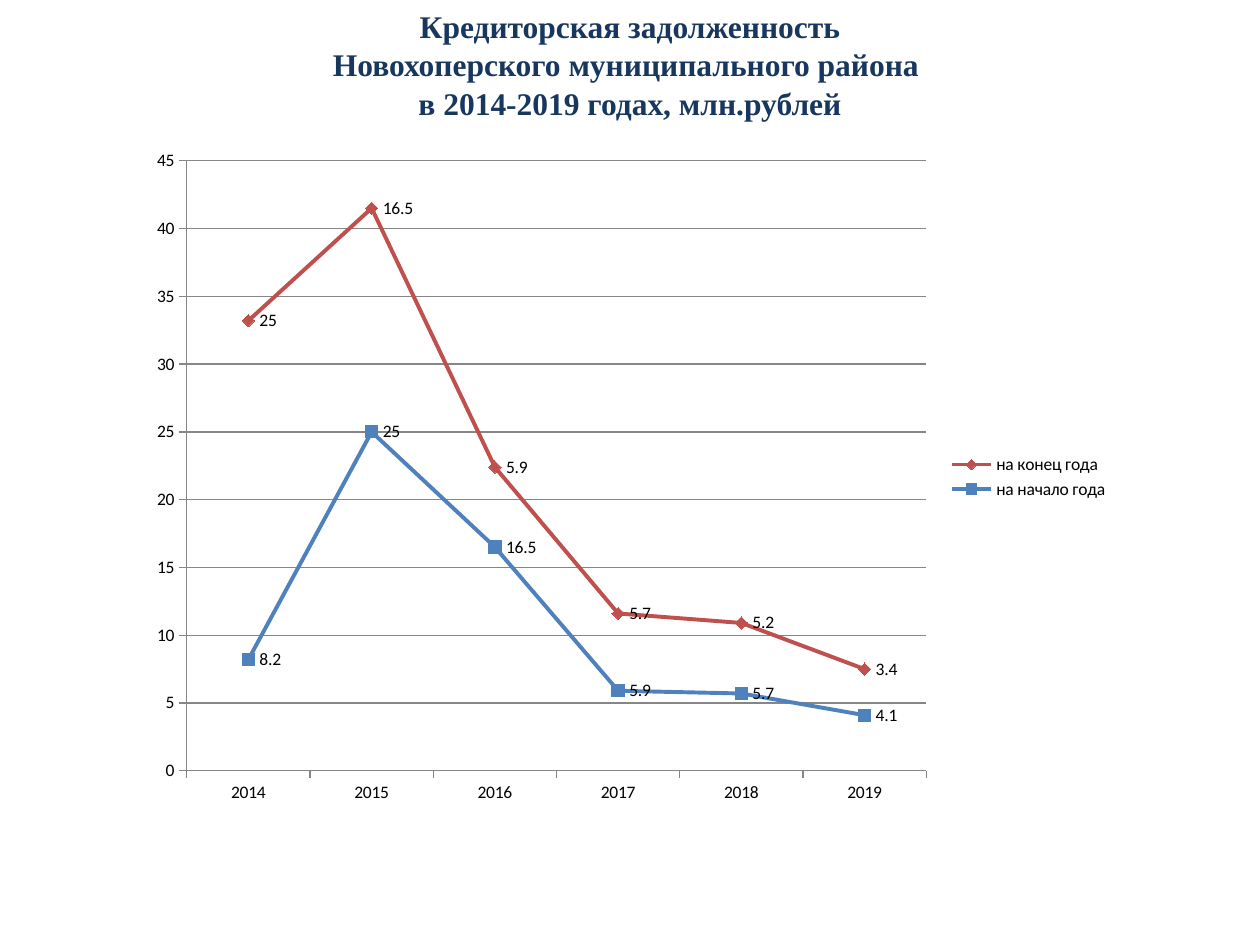
from pptx import Presentation
from pptx import util as u
from pptx.chart.data import CategoryChartData
from pptx.dml.color import RGBColor
from pptx.enum import chart as ch
from pptx.enum import text

TITLE_LINES = [
    "Кредиторская задолженность",
    "Новохоперского муниципального района ",
    "в 2014-2019 годах, млн.рублей",
]
YEARS = ["2014", "2015", "2016", "2017", "2018", "2019"]
# Name, values, colour, marker
DEBT_SERIES = [
    ("на начало года", (8.2, 25, 16.5, 5.9, 5.7, 4.1), "4F81BD", ch.XL_MARKER_STYLE.SQUARE),
    ("на конец года", (25, 16.5, 5.9, 5.7, 5.2, 3.4), "C0504D", ch.XL_MARKER_STYLE.DIAMOND),
]


def color(hex_string):
    return RGBColor.from_string(hex_string)


class DebtSlide:
    title_font, title_color = "Times New Roman", "17375E"
    chart_font, chart_color, axis_color = "Calibri", "000000", "868686"

    def __init__(self, presentation):
        self.slide = presentation.slides.add_slide(presentation.slide_layouts[5])

    def place_title(self, lines, left, top, width, height):
        shape = self.slide.shapes.title
        shape.left, shape.top = u.Inches(left), u.Inches(top)
        shape.width, shape.height = u.Inches(width), u.Inches(height)
        frame = shape.text_frame
        frame.word_wrap = True
        frame.auto_size = text.MSO_AUTO_SIZE.SHAPE_TO_FIT_TEXT
        frame.vertical_anchor = text.MSO_ANCHOR.TOP
        for index, line in enumerate(lines):
            paragraph = frame.add_paragraph() if index else frame.paragraphs[0]
            paragraph.alignment = text.PP_ALIGN.CENTER
            paragraph.line_spacing = u.Pt(22)
            paragraph.space_before = u.Pt(0)
            run = paragraph.add_run()
            run.text = line
            run.font.name, run.font.size, run.font.bold = self.title_font, u.Pt(18), True
            run.font.color.rgb = color(self.title_color)

    def format_line(self, line, hex_string, width):
        line.color.rgb = color(hex_string)
        line.width = u.Pt(width)

    def add_line_chart(self, categories, series_list, left, top, width, height):
        data = CategoryChartData()
        data.categories = categories
        for name, values, *_ in series_list:
            data.add_series(name, values)
        chart = self.slide.shapes.add_chart(
            ch.XL_CHART_TYPE.LINE_MARKERS_STACKED,
            u.Inches(left), u.Inches(top), u.Inches(width), u.Inches(height), data,
        ).chart
        chart.has_title = False
        chart.font.name, chart.font.size = self.chart_font, u.Pt(10)
        chart.font.color.rgb = color(self.chart_color)

        # Legend
        chart.has_legend = True
        chart.legend.position = ch.XL_LEGEND_POSITION.RIGHT
        chart.legend.include_in_layout = False

        # Axes and gridlines
        for axis in (chart.category_axis, chart.value_axis):
            axis.major_tick_mark = ch.XL_TICK_MARK.OUTSIDE
            axis.minor_tick_mark = ch.XL_TICK_MARK.NONE
            self.format_line(axis.format.line, self.axis_color, 0.75)
        chart.value_axis.has_major_gridlines = True
        self.format_line(chart.value_axis.major_gridlines.format.line, self.axis_color, 0.75)

        # Series with markers and value labels
        plot = chart.plots[0]
        plot.vary_by_categories = False
        for series, (_, _, hex_string, marker_style) in zip(plot.series, series_list):
            series.smooth = False
            self.format_line(series.format.line, hex_string, 2.25)
            marker = series.marker
            marker.style, marker.size = marker_style, 7
            marker.format.fill.solid()
            marker.format.fill.fore_color.rgb = color(hex_string)
            self.format_line(marker.format.line, hex_string, 0.75)
            labels = series.data_labels
            labels.show_value = True
            labels.position = ch.XL_LABEL_POSITION.RIGHT


def main():
    presentation = Presentation()
    presentation.slide_width, presentation.slide_height = u.Inches(10), u.Inches(7.5)
    debt_slide = DebtSlide(presentation)
    debt_slide.place_title(TITLE_LINES, 0, 0, 10, 1.01)
    debt_slide.add_line_chart(YEARS, DEBT_SERIES, 1.09, 1.09, 7.81, 5.39)
    presentation.save("out.pptx")


if __name__ == "__main__":
    main()
